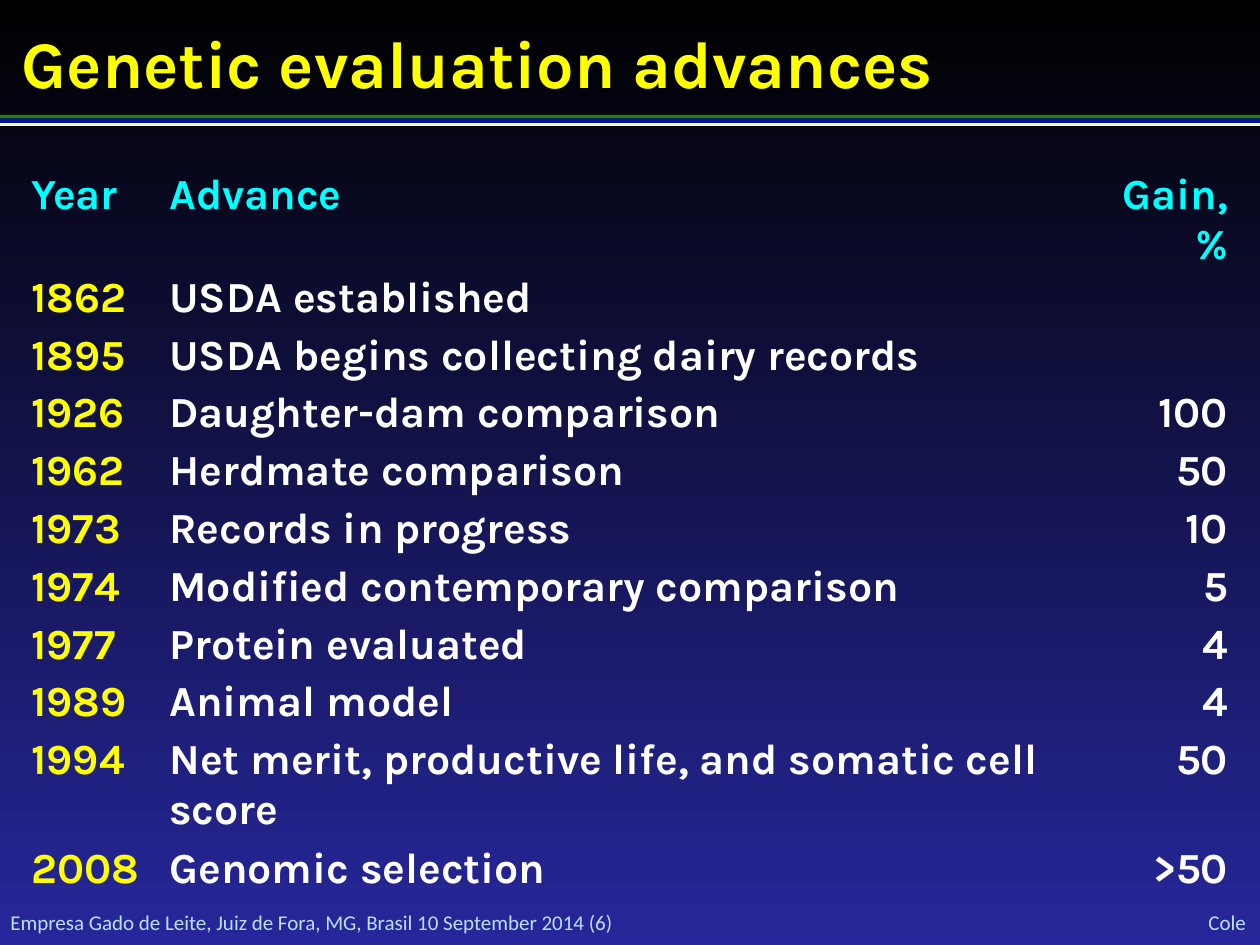
from pptx import Presentation
from pptx.dml.color import RGBColor
from pptx.enum.shapes import MSO_SHAPE as Shape
from pptx.enum.text import MSO_ANCHOR as Anchor, PP_ALIGN as Align
from pptx.util import Pt

YELLOW, CYAN, WHITE, PALE_BLUE = "FFFF00", "00FFFF", "FFFFFF", "B8E2FF"
NO_GRID_STYLE = "{2D5ABB26-0587-4C30-8999-92F81FD0307C}"
LINE, GAP = 28.6, 3.6  # text line height and cell bottom margin

HEADER = ("Year", "Advance", "Gain, %")
ADVANCES = [
    ("1862", "USDA established", ""),
    ("1895", "USDA begins collecting dairy records", ""),
    ("1926", "Daughter-dam comparison", "100"),
    ("1962", "Herdmate comparison", "50"),
    ("1973", "Records in progress", "10"),
    ("1974", "Modified contemporary comparison", "5"),
    ("1977", "Protein evaluated", "4"),
    ("1989", "Animal model", "4"),
    ("1994", "Net merit, productive life, and somatic cell score", "50"),
    ("2008", "Genomic selection", ">50"),
]


def rgb(value):
    return RGBColor.from_string(value)


class Deck:
    def __init__(self, width, height):
        self.prs = Presentation()
        self.prs.slide_width, self.prs.slide_height = Pt(width), Pt(height)
        self.s = self.prs.slides.add_slide(self.prs.slide_layouts[6])

    def background(self, top, bottom):
        fill = self.s.background.fill
        fill.gradient()
        fill.gradient_angle = 270
        for stop, color, pos in zip(fill.gradient_stops, (top, bottom), (0, 1)):
            stop.color.rgb, stop.position = rgb(color), pos

    def set_text(self, tf, text, size, color, font, bold=False, align=Align.LEFT):
        tf.text = text
        p = tf.paragraphs[0]
        p.alignment = align
        for r in p.runs:
            r.font.name, r.font.size, r.font.bold = font, Pt(size), bold
            r.font.color.rgb = rgb(color)

    def text(self, x, y, w, h, text, size, color, font, bold=False,
             align=Align.LEFT, anchor=Anchor.MIDDLE):
        tf = self.s.shapes.add_textbox(Pt(x), Pt(y), Pt(w), Pt(h)).text_frame
        tf.word_wrap, tf.vertical_anchor = True, anchor
        tf.margin_left = tf.margin_right = tf.margin_top = tf.margin_bottom = 0
        self.set_text(tf, text, size, color, font, bold, align)

    def bar(self, y, h, color):
        sp = self.s.shapes.add_shape(Shape.RECTANGLE, 0, Pt(y), self.prs.slide_width, Pt(h))
        sp.shadow.inherit = False
        sp.fill.solid()
        sp.fill.fore_color.rgb = rgb(color)
        sp.line.fill.background()

    def table(self, x, y, widths, heights, rows, size, font):
        frame = self.s.shapes.add_table(len(rows), len(widths), Pt(x), Pt(y),
                                        Pt(sum(widths)), Pt(sum(heights)))
        table = frame.table
        table.first_row = table.horz_banding = False
        table._tbl.tblPr.find("{*}tableStyleId").text = NO_GRID_STYLE
        for column, width in zip(table.columns, widths):
            column.width = Pt(width)
        for i, (row, height) in enumerate(zip(rows, heights)):
            table.rows[i].height = Pt(height)
            colors = (YELLOW, WHITE, WHITE) if i else (CYAN,) * 3
            for j, (value, color) in enumerate(zip(row, colors)):
                cell = table.cell(i, j)
                cell.fill.background()
                cell.margin_left = cell.margin_right = cell.margin_top = 0
                cell.margin_bottom = Pt(GAP if i else 0)
                align = Align.RIGHT if j == 2 else Align.LEFT
                self.set_text(cell.text_frame, value, size, color, font, True, align)


def main():
    deck = Deck(720, 540)
    deck.background("000000", "27279B")

    # Footer
    deck.text(6, 520, 612, 14.4, "Empresa Gado de Leite, Juiz de Fora, MG, Brasil 10 September 2014 (6)",
              12, PALE_BLUE, "Calibri")
    deck.text(631.5, 519.5, 80.5, 14.4, "Cole", 12, PALE_BLUE, "Calibri", align=Align.RIGHT)

    # Title with its three-colour rule
    for y, h, color in ((65.6, 2, "2A7E00"), (70.2, 1.8, WHITE), (67.6, 2.6, "001799")):
        deck.bar(y, h, color)
    deck.text(12.5, 12.5, 648, 46, "Genetic evaluation advances", 38, YELLOW, "Karla",
              bold=True, anchor=Anchor.TOP)

    # Advances: the header and the 1994 row take two lines
    heights = [2 * LINE] + [LINE + GAP] * 8 + [2 * LINE + GAP, LINE + GAP]
    deck.table(18, 97.2, (78.8, 520.6, 84.4), heights, [HEADER] + ADVANCES, 24.5, "Karla")

    deck.prs.save("out.pptx")


if __name__ == "__main__":
    main()
